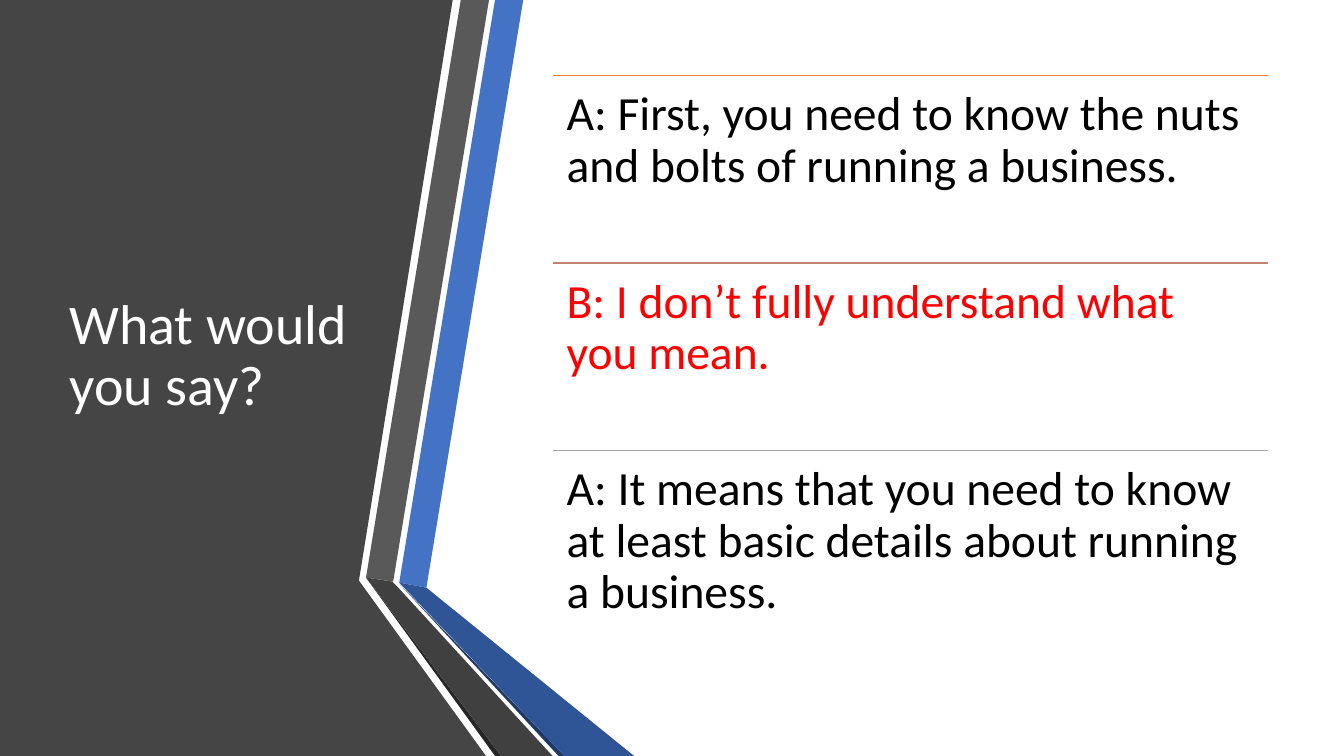
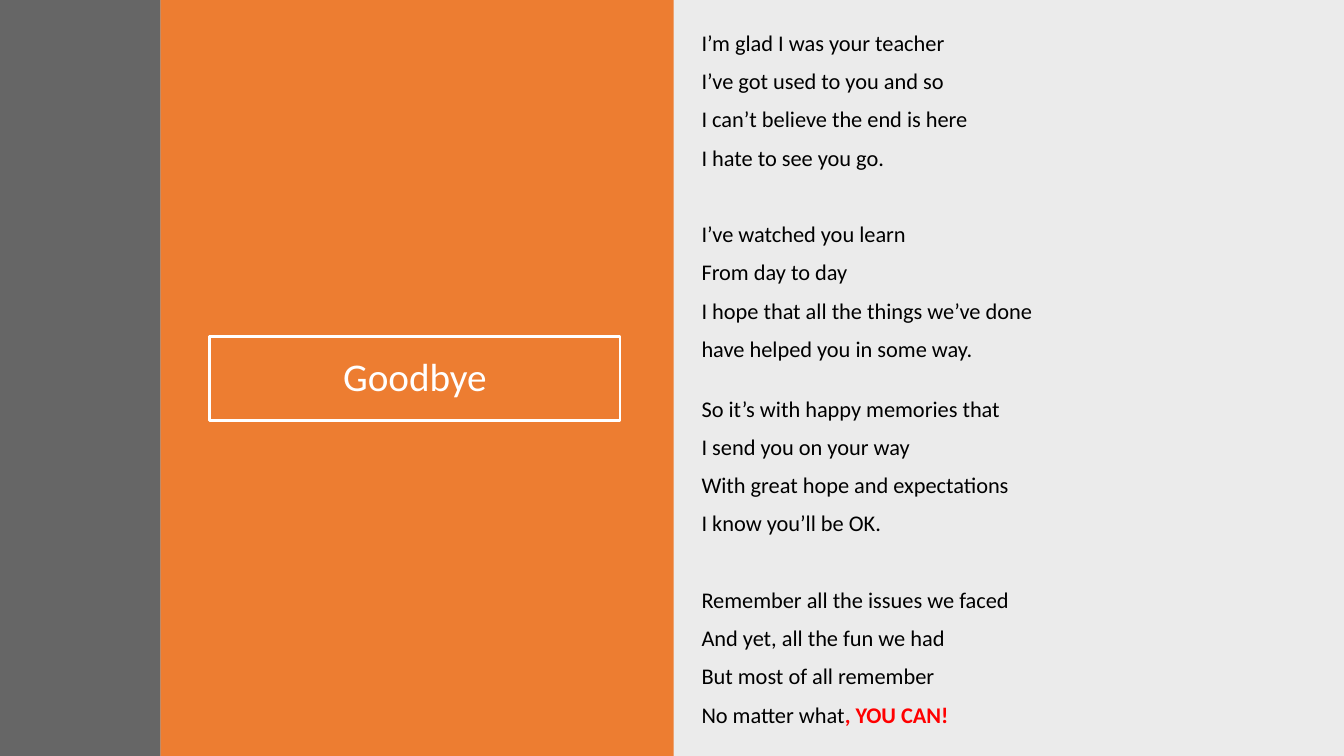
"""Build a dialogue slide and a farewell poem slide."""
from dataclasses import dataclass
from typing import Optional

from lxml.etree import SubElement
from pptx import Presentation
from pptx.dml.color import RGBColor
from pptx.enum.shapes import MSO_CONNECTOR as Link, MSO_SHAPE as Preset
from pptx.enum.text import MSO_ANCHOR as Anchor, PP_ALIGN as Align
from pptx.oxml.ns import qn
from pptx.util import Inches, Pt

WHITE = RGBColor(0xFF, 0xFF, 0xFF)
BLACK = RGBColor(0x00, 0x00, 0x00)
RED = RGBColor(0xFF, 0x00, 0x00)
ORANGE = RGBColor(0xED, 0x7D, 0x31)
DUSTY_ROSE = RGBColor(0xC4, 0x81, 0x70)
SILVER = RGBColor(0xA5, 0xA5, 0xA5)
CHARCOAL = RGBColor(0x45, 0x45, 0x45)
DARK_GRAY = RGBColor(0x40, 0x40, 0x40)
MID_GRAY = RGBColor(0x59, 0x59, 0x59)
NEAR_BLACK = RGBColor(0x26, 0x26, 0x26)
BLUE = RGBColor(0x44, 0x72, 0xC4)
DEEP_BLUE = RGBColor(0x2F, 0x55, 0x97)
NAVY = RGBColor(0x20, 0x38, 0x64)

FONT = "Calibri"
WIDTH, HEIGHT = 13.33, 7.5
LINE_SPACING = 0.9
VERSE_GAP, STANZA_GAP = 10, 37.5


@dataclass(frozen=True)
class Area:
    left: float
    top: float
    width: float
    height: float

    def lengths(self) -> tuple:
        return tuple(Inches(v) for v in (self.left, self.top, self.width, self.height))


@dataclass(frozen=True)
class Span:
    text: str
    color: RGBColor = BLACK
    bold: bool = False


@dataclass(frozen=True)
class Para:
    spans: tuple[Span, ...]
    before: float = 0


@dataclass(frozen=True)
class TextStyle:
    size: float
    anchor: Anchor = Anchor.TOP
    align: Align = Align.LEFT
    inset: Optional[float] = None


@dataclass(frozen=True)
class Ribbon:
    color: RGBColor
    points: tuple[tuple[float, float], ...]


@dataclass(frozen=True)
class Remark:
    text: str
    text_color: RGBColor
    rule_color: RGBColor


SIDE_TITLE = TextStyle(40, Anchor.MIDDLE)
FRAMED_TITLE = TextStyle(28, Anchor.MIDDLE, Align.CENTER)
REMARK_STYLE = TextStyle(34, inset=0.14)
VERSE_STYLE = TextStyle(16)

RIBBONS = (
    Ribbon(CHARCOAL, ((0, 0), (4.49, 0), (3.56, 5.76), (4.82, HEIGHT), (0, HEIGHT))),
    Ribbon(BLUE, ((3.96, 5.78), (4.23, 5.83), (5.19, 0), (4.91, 0))),
    Ribbon(MID_GRAY, ((4.85, 0), (4.57, 0), (3.63, 5.73), (3.9, 5.77))),
    Ribbon(NEAR_BLACK, ((3.63, 5.73), (4.91, HEIGHT), (4.97, HEIGHT))),
    Ribbon(NAVY, ((3.96, 5.79), (5.54, HEIGHT), (5.6, HEIGHT))),
    Ribbon(DEEP_BLUE, ((3.96, 5.78), (5.6, HEIGHT), (6.29, HEIGHT), (4.23, 5.83))),
    Ribbon(DARK_GRAY, ((5.48, HEIGHT), (3.95, 5.83), (3.89, 5.77), (3.63, 5.73),
                       (4.97, HEIGHT))),
)

REMARKS = (
    Remark("A: First, you need to know the nuts and bolts of running a business.",
           BLACK, ORANGE),
    Remark("B: I don’t fully understand what you mean.", RED, DUSTY_ROSE),
    Remark("A: It means that you need to know at least basic details about running "
           "a business.", BLACK, SILVER),
)
REMARK_LEFT, REMARK_TOP, REMARK_WIDTH, REMARK_PITCH = 5.48, 0.75, 7.1, 1.86

POEM_LEFT, POEM_WIDTH, POEM_HEIGHT = 6.86, 5.53, 2.79
POEM_HALVES = {
    0.27: (
        ("I’m glad I was your teacher", "I’ve got used to you and so",
         "I can’t believe the end is here", "I hate to see you go."),
        ("I’ve watched you learn", "From day to day",
         "I hope that all the things we’ve done", "have helped you in some way."),
    ),
    3.9: (
        ("So it’s with happy memories that", "I send you on your way",
         "With great hope and expectations", "I know you’ll be OK."),
        ("Remember all the issues we faced", "And yet, all the fun we had",
         "But most of all remember", "No matter what|, YOU CAN!"),
    ),
}


def paint(shape, color: RGBColor, opacity: int = 100) -> None:
    shape.shadow.inherit = False
    shape.line.fill.background()
    shape.fill.solid()
    shape.fill.fore_color.rgb = color
    if opacity < 100:
        tint = shape.fill._xPr.find(qn("a:solidFill"))[0]
        SubElement(tint, qn("a:alpha"), val=str(opacity * 1000))


def add_panel(page, area: Area, color: RGBColor, opacity: int = 100) -> None:
    paint(page.shapes.add_shape(Preset.RECTANGLE, *area.lengths()), color, opacity)


def add_ribbon(page, ribbon: Ribbon) -> None:
    start, *rest = [(Inches(x), Inches(y)) for x, y in ribbon.points]
    builder = page.shapes.build_freeform(*start)
    builder.add_line_segments(rest, close=True)
    paint(builder.convert_to_shape(), ribbon.color)


def add_rule(page, left: float, top: float, width: float, color: RGBColor) -> None:
    rule = page.shapes.add_connector(Link.STRAIGHT, Inches(left), Inches(top),
                                     Inches(left + width), Inches(top))
    rule.line.color.rgb = color
    rule.line.width = Pt(1)
    SubElement(rule._element.spPr, qn("a:effectLst"))


def write(shape, paras: list[Para], style: TextStyle) -> None:
    frame = shape.text_frame
    layout = {"word_wrap": True, "vertical_anchor": style.anchor}
    if style.inset is not None:
        layout |= {f"margin_{side}": Inches(style.inset)
                   for side in ("left", "top", "right", "bottom")}
    for name, value in layout.items():
        setattr(frame, name, value)
    for index, item in enumerate(paras):
        para = frame.add_paragraph() if index else frame.paragraphs[0]
        spacing = {"alignment": style.align, "line_spacing": LINE_SPACING,
                   "space_before": Pt(item.before)}
        for name, value in spacing.items():
            setattr(para, name, value)
        for span in item.spans:
            run = para.add_run()
            run.text = span.text
            run.font.color.rgb = span.color
            looks = {"name": FONT, "size": Pt(style.size), "bold": span.bold}
            for name, value in looks.items():
                setattr(run.font, name, value)


def add_text(page, area: Area, paras: list[Para], style: TextStyle):
    box = page.shapes.add_textbox(*area.lengths())
    write(box, paras, style)
    return box


def add_title(page, area: Area, text: str, style: TextStyle):
    return add_text(page, area, [Para((Span(text, WHITE),))], style)


def verse_paras(stanzas: tuple[tuple[str, ...], ...]) -> list[Para]:
    paras = []
    for stanza in stanzas:
        for index, verse in enumerate(stanza):
            plain, mark, stressed = verse.partition("|")
            spans = (Span(plain),) + ((Span(stressed, RED, True),) if mark else ())
            gap = STANZA_GAP if paras and index == 0 else VERSE_GAP
            paras.append(Para(spans, gap))
    return paras


def build_dialogue(page) -> None:
    for ribbon in RIBBONS:
        add_ribbon(page, ribbon)
    add_title(page, Area(0.59, 0.75, 3.04, 5.58), "What would you say?", SIDE_TITLE)
    for index, remark in enumerate(REMARKS):
        top = REMARK_TOP + index * REMARK_PITCH
        add_rule(page, REMARK_LEFT, top, REMARK_WIDTH, remark.rule_color)
        add_text(page, Area(REMARK_LEFT, top, REMARK_WIDTH, REMARK_PITCH),
                 [Para((Span(remark.text, remark.text_color),))], REMARK_STYLE)


def build_farewell(page) -> None:
    add_panel(page, Area(6.67, 0, WIDTH - 6.67, HEIGHT), BLACK, 8)
    add_panel(page, Area(1.59, 0, 5.09, HEIGHT), ORANGE)
    title = add_title(page, Area(2.08, 3.34, 4.07, 0.83), "Goodbye", FRAMED_TITLE)
    title.line.color.rgb = WHITE
    title.line.width = Pt(2)
    add_panel(page, Area(0, 0, 1.59, HEIGHT), DARK_GRAY, 80)
    for top, stanzas in POEM_HALVES.items():
        add_text(page, Area(POEM_LEFT, top, POEM_WIDTH, POEM_HEIGHT),
                 verse_paras(stanzas), VERSE_STYLE)


def main() -> None:
    deck = Presentation()
    deck.slide_width, deck.slide_height = Inches(WIDTH), Inches(HEIGHT)
    blank = deck.slide_layouts[6]
    for build in (build_dialogue, build_farewell):
        build(deck.slides.add_slide(blank))
    deck.save("out.pptx")


if __name__ == "__main__":
    main()
